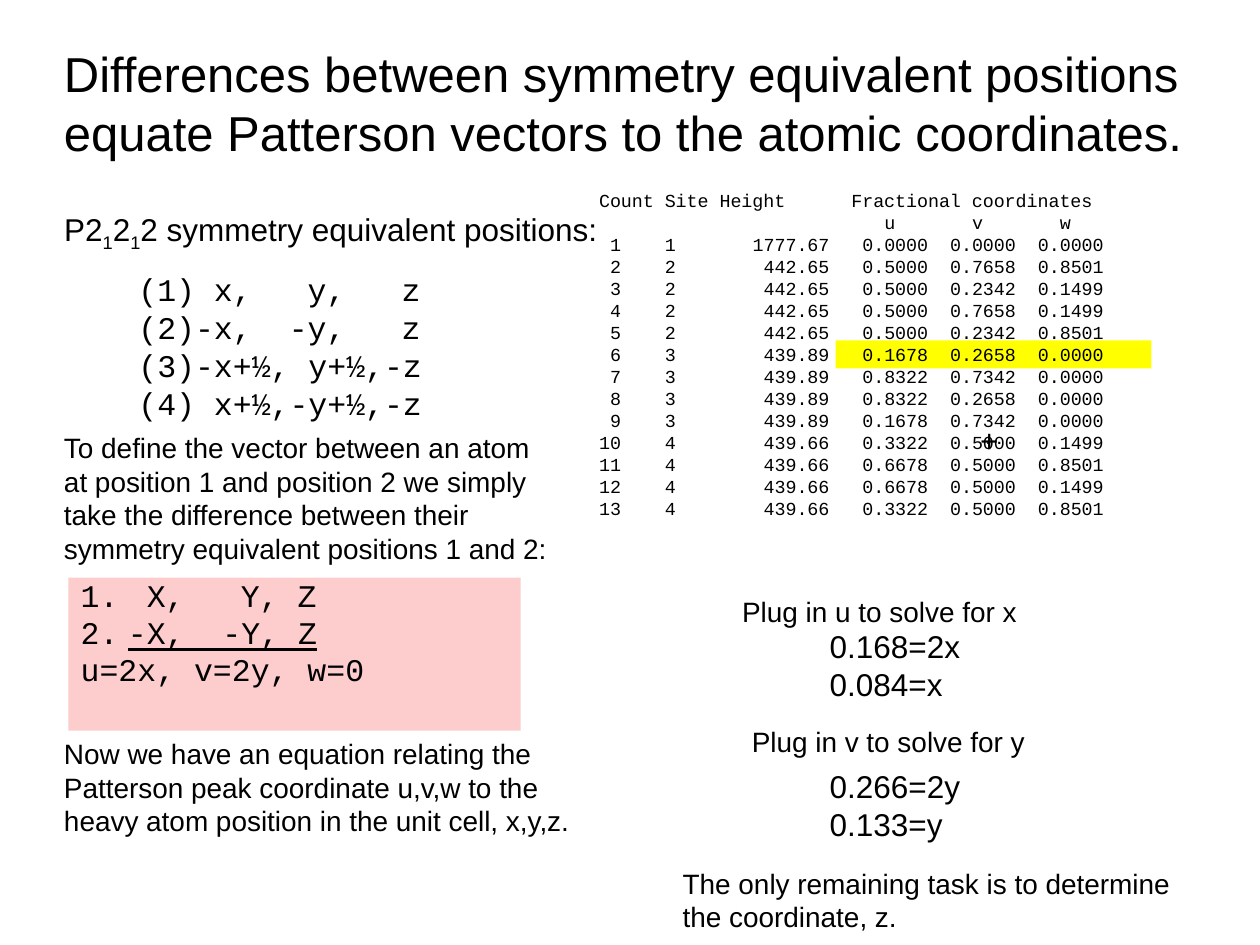
from lxml.etree import SubElement
from pptx import Presentation
from pptx.dml.color import RGBColor
from pptx.enum.shapes import MSO_SHAPE
from pptx.enum.text import MSO_ANCHOR, PP_ALIGN
from pptx.oxml.ns import qn
from pptx.util import Pt

COLORS = {"text": "000000", "formula": "FDCDCD", "highlight": "FFFF00"}
SANS, MONO = "Arial", "Courier New"
MONO_ADVANCE = 0.597  # width of a Courier character per point of size

OPERATORS = [" x,\t y,\t z", "-x,\t-y,\t z", "-x+½, y+½,-z", " x+½,-y+½,-z"]
PEAKS = [
    (1, "1777.67", "0.0000", "0.0000", "0.0000"),
    (2, "442.65", "0.5000", "0.7658", "0.8501"),
    (2, "442.65", "0.5000", "0.2342", "0.1499"),
    (2, "442.65", "0.5000", "0.7658", "0.1499"),
    (2, "442.65", "0.5000", "0.2342", "0.8501"),
    (3, "439.89", "0.1678", "0.2658", "0.0000"),
    (3, "439.89", "0.8322", "0.7342", "0.0000"),
    (3, "439.89", "0.8322", "0.2658", "0.0000"),
    (3, "439.89", "0.1678", "0.7342", "0.0000"),
    (4, "439.66", "0.3322", "0.5000", "0.1499"),
    (4, "439.66", "0.6678", "0.5000", "0.8501"),
    (4, "439.66", "0.6678", "0.5000", "0.1499"),
    (4, "439.66", "0.3322", "0.5000", "0.8501"),
]


def add_run(paragraph, text, size, font=SANS):
    run = paragraph.add_run()
    run.text = text
    run.font.size, run.font.name = Pt(size), font
    run.font.color.rgb = RGBColor.from_string(COLORS["text"])
    return run


def add_lines(shape, lines, size, font=SANS):
    """Write one paragraph per line and return the paragraphs."""
    frame = shape.text_frame
    paragraphs = []
    for index, line in enumerate(lines):
        paragraph = frame.add_paragraph() if index else frame.paragraphs[0]
        paragraph.alignment = PP_ALIGN.LEFT
        add_run(paragraph, line, size, font)
        paragraphs.append(paragraph)
    return paragraphs


def add_text_box(slide, box, wrap=True):
    shape = slide.shapes.add_textbox(*map(Pt, box))
    shape.text_frame.word_wrap = wrap
    return shape


def add_panel(slide, box, color):
    shape = slide.shapes.add_shape(MSO_SHAPE.RECTANGLE, *map(Pt, box))
    shape.shadow.inherit = False
    shape.fill.solid()
    shape.fill.fore_color.rgb = RGBColor.from_string(COLORS[color])
    shape.line.fill.background()
    return shape


def set_tabs(paragraph, stops, align="l"):
    tab_list = SubElement(paragraph._p.get_or_add_pPr(), qn("a:tabLst"))
    for stop in stops:
        SubElement(tab_list, qn("a:tab"), pos=str(int(Pt(stop))), algn=align)


def add_note(slide, box, *lines, size=16, wrap=True):
    add_lines(add_text_box(slide, box, wrap), lines, size)


def add_space_group(slide, box):
    paragraph = add_text_box(slide, box).text_frame.paragraphs[0]
    for text, is_subscript in [("P2", False), ("1", True), ("2", False), ("1", True),
                               ("2 symmetry equivalent positions:", False)]:
        run = add_run(paragraph, text, 18)
        if is_subscript:
            run._r.get_or_add_rPr().set("baseline", "-25000")


def add_operators(slide, box):
    size = 18
    lines = [f"\t({number}){operator}" for number, operator in enumerate(OPERATORS, 1)]
    stops = [72 + column * size * MONO_ADVANCE for column in (0, 8, 13)]
    for paragraph in add_lines(add_text_box(slide, box), lines, size, MONO):
        set_tabs(paragraph, stops)


def add_subtraction(slide, box):
    shape = add_panel(slide, box, "formula")
    shape.text_frame.word_wrap = True
    shape.text_frame.vertical_anchor = MSO_ANCHOR.TOP
    size, indent = 18, 27
    # The second term has spaces, so that its underline runs unbroken
    lines = [" X,\t Y, Z", "-X,  -Y, Z", "u=2x, v=2y, w=0"]
    paragraphs = add_lines(shape, lines, size, MONO)
    for paragraph in paragraphs:
        paragraph.line_spacing = 0.8
        paragraph.space_before = Pt(0.2 * size)
    # Numbered terms
    for paragraph in paragraphs[:2]:
        properties = paragraph._p.get_or_add_pPr()
        properties.set("marL", str(int(Pt(indent))))
        properties.set("indent", str(int(Pt(-indent))))
        SubElement(properties, qn("a:buFont"), typeface=MONO)
        SubElement(properties, qn("a:buAutoNum"), type="arabicPeriod")
    # The stops hold whether measured from the edge or the indent
    column = 5 * size * MONO_ADVANCE
    set_tabs(paragraphs[0], [column, indent + column])
    paragraphs[1].runs[0].font.underline = True


def add_peak_list(slide, box):
    left, top, width, height = box
    # Highlighted coordinates of peak 6, behind the text
    add_panel(slide, (left + 148.5, top + 90, 180.5, 16), "highlight")
    size = 10.5
    rows = ["\t".join(["", str(count), *map(str, peak)])
            for count, peak in enumerate(PEAKS, 1)]
    headings = ["\tCount Site Height\tFractional coordinates", "\tu\tv\tw"]
    paragraphs = add_lines(add_text_box(slide, box), headings + rows, size, MONO)
    # Tab stops in character columns: two headings, then right-aligned values
    layouts = [((1, 24), "l"), ((27, 35, 43), "l")]
    layouts += [((3, 8, 22, 31, 39, 47), "r")] * len(rows)
    for paragraph, (columns, align) in zip(paragraphs, layouts):
        set_tabs(paragraph, [column * size * MONO_ADVANCE for column in columns], align)


def add_solution(slide, box, prompt, steps, steps_left, steps_top):
    left, top, width, height = box
    add_note(slide, box, prompt, wrap=False)
    add_note(slide, (left + steps_left, top + steps_top, 89.5, 50.5), *steps, size=18)


def main():
    presentation = Presentation()
    presentation.slide_width, presentation.slide_height = Pt(720), Pt(540)
    slide = presentation.slides.add_slide(presentation.slide_layouts[6])

    # Title
    add_note(slide, (29.5, 21.5, 684, 90),
             "Differences between symmetry equivalent positions "
             "equate Patterson vectors to the atomic coordinates.", size=28)

    # Left column: symmetry and the vector equation
    add_subtraction(slide, (39, 330, 258.5, 87.5))
    add_operators(slide, (0, 151, 321, 94.5))
    add_space_group(slide, (29.5, 116.5, 330.5, 29))
    add_note(slide, (29.5, 242.5, 291, 85),
             "To define the vector between an atom at position 1 and position 2 "
             "we simply take the difference between their symmetry equivalent "
             "positions 1 and 2:")
    add_note(slide, (29.5, 417.5, 307.5, 65.5),
             "Now we have an equation relating the Patterson peak coordinate u,v,w "
             "to the heavy atom position in the unit cell, x,y,z.")

    # Right column: solving for x and y
    add_solution(slide, (417, 336, 173.5, 26.5), "Plug in u to solve for x",
                 ("0.168=2x", "0.084=x"), 50, 19)
    add_solution(slide, (422.5, 410.5, 173.5, 26.5), "Plug in v to solve for y",
                 ("0.266=2y", "0.133=y"), 44.5, 24.5)
    add_note(slide, (383, 491.5, 301, 46), "The only remaining task is to determine",
             "the coordinate, z.", wrap=False)

    # Marker and peak list
    add_note(slide, (553, 237, 25, 29), "+", size=18, wrap=False)
    add_peak_list(slide, (329, 104.5, 329, 224))

    presentation.save("out.pptx")


if __name__ == "__main__":
    main()
